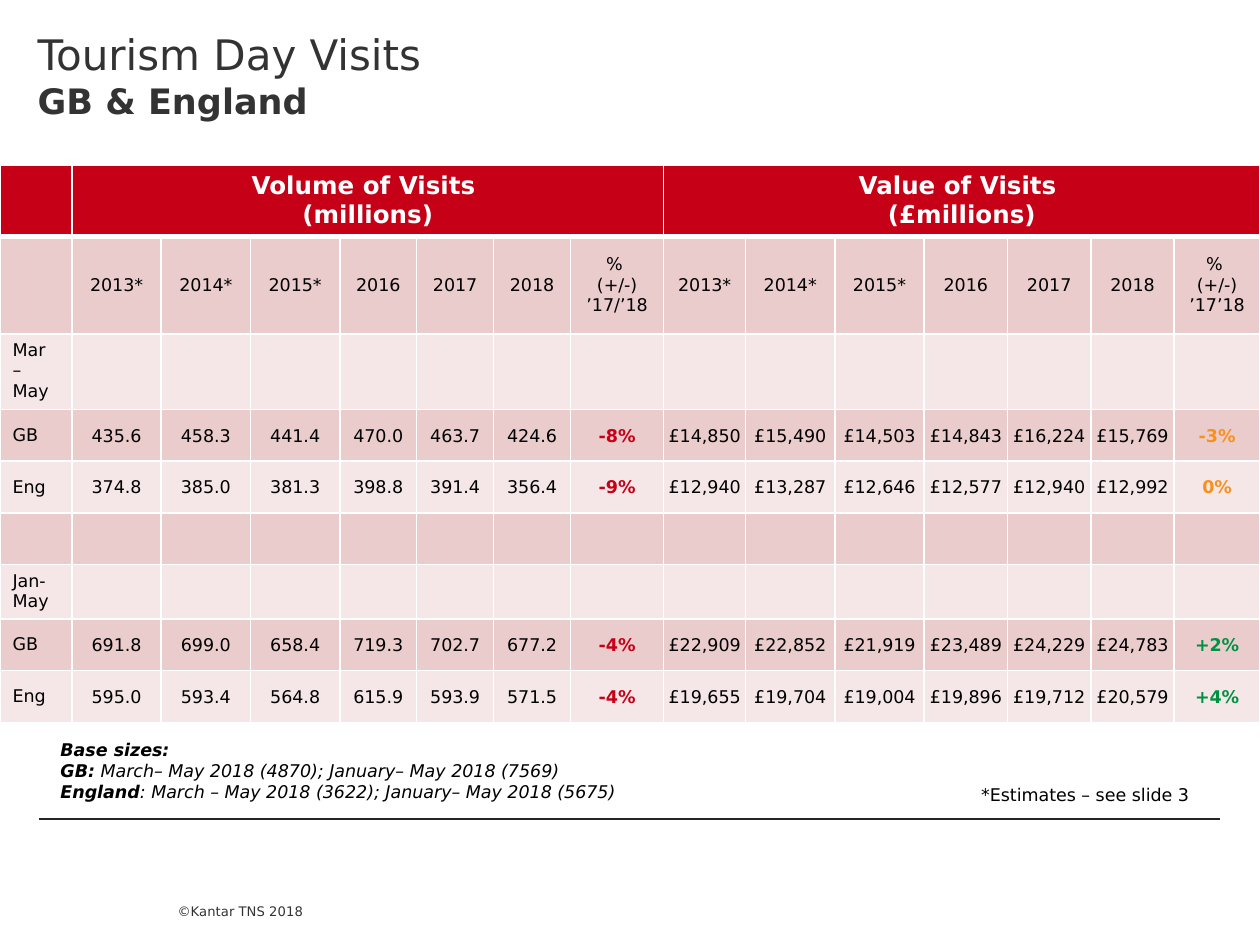
from dataclasses import dataclass

from lxml import etree
from pptx import Presentation
from pptx.dml.color import RGBColor
from pptx.enum.shapes import MSO_CONNECTOR
from pptx.enum.text import MSO_ANCHOR, PP_ALIGN
from pptx.oxml import parse_xml
from pptx.oxml.ns import nsdecls, qn
from pptx.util import Cm, Pt

STRAIGHT = MSO_CONNECTOR.STRAIGHT
TOP, MIDDLE, BOTTOM = MSO_ANCHOR.TOP, MSO_ANCHOR.MIDDLE, MSO_ANCHOR.BOTTOM
LEFT, CENTER = PP_ALIGN.LEFT, PP_ALIGN.CENTER


@dataclass(frozen=True)
class Theme:
    font: str = "DejaVu Sans"
    title_size: float = 24
    subtitle_size: float = 20
    header_size: float = 14
    body_size: float = 10
    footer_size: float = 7.5
    heading: str = "333333"
    text: str = "000000"
    white: str = "FFFFFF"
    rule: str = "262626"
    red: str = "C50017"
    amber: str = "F7911E"
    green: str = "009242"
    dark_band: str = "EACCCC"
    light_band: str = "F5E7E8"


theme = Theme()


def add_run(paragraph, text, size=theme.body_size, color=theme.text, bold=False, italic=False):
    run = paragraph.add_run()
    run.text = text
    font = run.font
    font.name, font.size, font.bold, font.italic = theme.font, Pt(size), bold, italic
    font.color.rgb = RGBColor.from_string(color)


def add_text_frame(left, top, width, height, margins=(0.25, 0.13, 0.25, 0.13), anchor=TOP, wrap=True):
    box = slide.shapes.add_textbox(Cm(left), Cm(top), Cm(width), Cm(height))
    frame = box.text_frame
    frame.word_wrap = wrap
    frame.vertical_anchor = anchor
    frame.margin_left, frame.margin_top, frame.margin_right, frame.margin_bottom = map(Cm, margins)
    return frame


presentation = Presentation()
presentation.slide_width, presentation.slide_height = Cm(25.4), Cm(19.05)
slide = presentation.slides.add_slide(presentation.slide_layouts[6])

# Footer: copyright and rule
frame = add_text_frame(3.58, 17.58, 2.72, 1.47, (0, 0, 0, 0.74), BOTTOM)
add_run(frame.paragraphs[0], "©Kantar TNS 2018", theme.footer_size, theme.heading)

rule = slide.shapes.add_connector(STRAIGHT, Cm(0.79), Cm(16.51), Cm(24.59), Cm(16.51))
rule.line.color.rgb = RGBColor.from_string(theme.rule)
rule.line.width = Pt(0.75)
etree.SubElement(rule._element.spPr, qn("a:effectLst"))

# Title
paragraph = add_text_frame(0, 0, 14.1, 3.56, (0.76, 0.58, 0.76, 0)).paragraphs[0]
add_run(paragraph, "Tourism Day Visits ", theme.title_size, theme.heading)
paragraph.add_line_break()
add_run(paragraph, "GB & England", theme.subtitle_size, theme.heading, bold=True)

# Table contents: one label, seven volume columns, seven value columns
years = ["2013*", "2014*", "2015*", "2016", "2017", "2018"]
blank = [""] * 14
rows = [
    ["", "Volume of Visits \n(millions)", *[""] * 6, "Value of Visits \n(£millions)", *[""] * 6],
    ["", *years, "% \n(+/-) ’17/’18", *years, "% \n(+/-) ’17’18"],
    ["Mar – May", *blank],
    ["GB", "435.6", "458.3", "441.4", "470.0", "463.7", "424.6", "-8%",
     "£14,850", "£15,490", "£14,503", "£14,843", "£16,224", "£15,769", "-3%"],
    ["Eng", "374.8", "385.0", "381.3", "398.8", "391.4", "356.4", "-9%",
     "£12,940", "£13,287", "£12,646", "£12,577", "£12,940", "£12,992", "0%"],
    ["", *blank],
    ["Jan-May", *blank],
    ["GB", "691.8", "699.0", "658.4", "719.3", "702.7", "677.2", "-4%",
     "£22,909", "£22,852", "£21,919", "£23,489", "£24,229", "£24,783", "+2%"],
    ["Eng", "595.0", "593.4", "564.8", "615.9", "593.9", "571.5", "-4%",
     "£19,655", "£19,704", "£19,004", "£19,896", "£19,712", "£20,579", "+4%"],
]
change_colors = {"-8%": theme.red, "-9%": theme.red, "-4%": theme.red,
                 "-3%": theme.amber, "0%": theme.amber,
                 "+2%": theme.green, "+4%": theme.green}
column_widths = [1.45, *[1.8] * 3, *[1.55] * 3, 1.88, 1.65, *[1.8] * 2, *[1.68] * 3, 1.73]
row_heights = [1.04, 1.96, 1.09, *[1.04] * 6]

# Table grid
table = slide.shapes.add_table(len(rows), len(column_widths), Cm(0), Cm(3.33),
                               Cm(25.4), Cm(sum(row_heights))).table
for column, width in zip(table.columns, column_widths):
    column.width = Cm(width)
for row, height in zip(table.rows, row_heights):
    row.height = Cm(height)
for first in (1, 8):
    table.cell(0, first).merge(table.cell(0, first + 6))

# Table cells
for row_index, values in enumerate(rows):
    is_header = row_index == 0
    band = theme.red if is_header else theme.dark_band if row_index % 2 else theme.light_band
    for column_index, value in enumerate(values):
        cell = table.cell(row_index, column_index)
        cell.fill.solid()
        cell.fill.fore_color.rgb = RGBColor.from_string(band)
        for position, side in enumerate(("lnL", "lnR", "lnT", "lnB")):
            heavy = (is_header and side == "lnB") or (row_index == 1 and side == "lnT")
            cell._tc.get_or_add_tcPr().insert(position, parse_xml(
                f'<a:{side} {nsdecls("a")} w="{Pt(3 if heavy else 1)}"><a:solidFill>'
                f'<a:srgbClr val="{theme.white}"/></a:solidFill></a:{side}>'))
        if not value:
            continue
        cell.vertical_anchor = TOP if is_header or value == "Mar – May" else MIDDLE
        if row_index > 1 and column_index > 0:
            cell.margin_left = cell.margin_top = cell.margin_right = Cm(0.03)
            cell.margin_bottom = Cm(0)
        for line_index, line in enumerate(value.split("\n")):
            frame = cell.text_frame
            paragraph = frame.add_paragraph() if line_index else frame.paragraphs[0]
            paragraph.alignment = CENTER if column_index else LEFT
            add_run(paragraph, line,
                    theme.header_size if is_header else theme.body_size,
                    theme.white if is_header else change_colors.get(value, theme.text),
                    bold=is_header or value in change_colors)

# Base sizes
frame = add_text_frame(0.97, 14.76, 21.44, 1.55)
paragraph = frame.paragraphs[0]
add_run(paragraph, "Base sizes: ", bold=True, italic=True)
paragraph.add_line_break()
add_run(paragraph, "GB:", bold=True, italic=True)
add_run(paragraph, " March– May 2018 (4870); January– May 2018 (7569)", italic=True)
paragraph = frame.add_paragraph()
add_run(paragraph, "England", bold=True, italic=True)
add_run(paragraph, ": March – May 2018 (3622); January– May 2018 (5675)", italic=True)

# Estimates note
frame = add_text_frame(19.53, 15.67, 4.88, 0.69, wrap=False)
add_run(frame.paragraphs[0], "*Estimates – see slide 3")

presentation.save("out.pptx")
